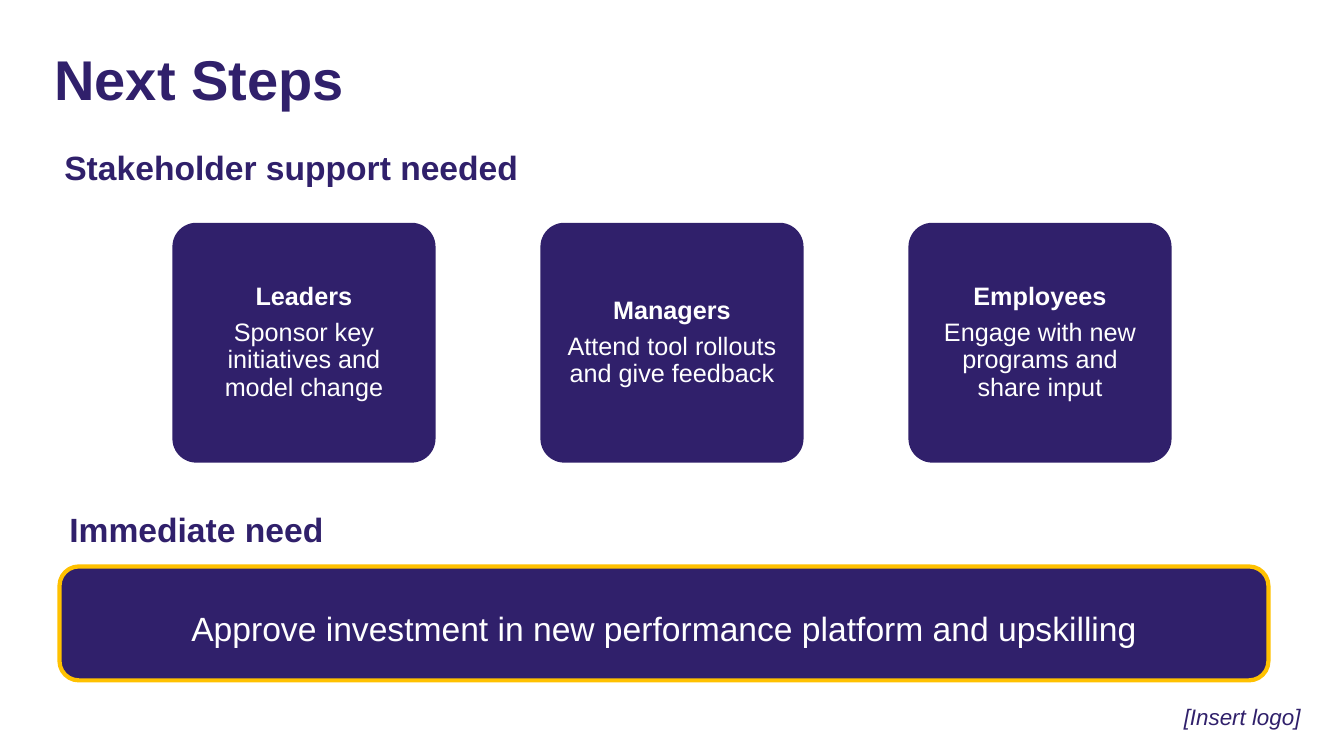
from pptx import Presentation
from pptx.dml.color import RGBColor
from pptx.enum import shapes, text
from pptx.util import Inches, Pt

TITLE = "Next Steps"
HEADS = [("Stakeholder support needed", 0.54, 1.41), ("Immediate need", 0.59, 5)]
CARDS = [
    ("Leaders", "Sponsor key initiatives and model change"),
    ("Managers", "Attend tool rollouts and give feedback"),
    ("Employees", "Engage with new programs and share input"),
]
NEED = "Approve investment in new performance platform and upskilling"
LOGO = "[Insert logo]"


class Theme:
    font = "Arial"
    ink = RGBColor.from_string("30206B")
    gold = RGBColor.from_string("FFC100")
    white = RGBColor.from_string("FFFFFF")
    title, head, card, note = 40, 24, 18, 16


def write(shape, *lines, size, color=Theme.ink, bold=False, italic=False,
          align=text.PP_ALIGN.LEFT, anchor=text.MSO_ANCHOR.TOP,
          pad=(0, 0, 0, 0), space=1.0, after=0):
    """Fill a shape with paragraphs; bold applies to the first one only."""
    frame = shape.text_frame
    frame.word_wrap = True
    frame.vertical_anchor = anchor
    (frame.margin_left, frame.margin_top,
     frame.margin_right, frame.margin_bottom) = map(Inches, pad)
    for i, line in enumerate(lines):
        para = frame.add_paragraph() if i else frame.paragraphs[0]
        para.alignment = align
        para.line_spacing = space
        para.space_after = Pt(after)
        run = para.add_run()
        run.text = line
        font = run.font
        font.name, font.size, font.color.rgb = Theme.font, Pt(size), color
        font.bold, font.italic = bold and i == 0, italic


def box(slide, *place):
    return slide.shapes.add_textbox(*map(Inches, place))


def panel(slide, *place, round=0.1, edge=None):
    shape = slide.shapes.add_shape(
        shapes.MSO_SHAPE.ROUNDED_RECTANGLE, *map(Inches, place))
    shape.adjustments[0] = round
    shape.shadow.inherit = False
    shape.fill.solid()
    shape.fill.fore_color.rgb = Theme.ink
    if edge is None:
        shape.line.fill.background()
    else:
        shape.line.color.rgb = edge
        shape.line.width = Pt(3)
    return shape


def main():
    deck = Presentation()
    deck.slide_width, deck.slide_height = Inches(13.33), Inches(7.5)
    slide = deck.slides.add_slide(deck.slide_layouts[6])
    mid = {"align": text.PP_ALIGN.CENTER, "anchor": text.MSO_ANCHOR.MIDDLE}

    write(box(slide, 0.54, 0.52, 12.27, 0.66), TITLE,
          size=Theme.title, bold=True, space=0.9)
    for head, left, top in HEADS:
        write(box(slide, left, top, 10.34, 0.5), head, size=Theme.head,
              bold=True, pad=(0.1, 0.05, 0.1, 0.05))

    left, step = 1.71, 3.65
    for i, (who, task) in enumerate(CARDS):
        card = panel(slide, left + i * step, 2.21, 2.61, 2.38)
        write(card, who, task, size=Theme.card, color=Theme.white, bold=True,
              pad=(0.14,) * 4, space=0.9, after=6.3, **mid)

    bar = panel(slide, 0.59, 5.62, 11.99, 1.13, round=0.17, edge=Theme.gold)
    write(bar, NEED, size=Theme.head, color=Theme.white,
          pad=(0.19, 0.04, 0.19, 0), space=1.14, **mid)

    write(box(slide, 11.63, 6.72, 1.38, 0.53), LOGO, size=Theme.note,
          italic=True, align=text.PP_ALIGN.CENTER,
          anchor=text.MSO_ANCHOR.BOTTOM, space=0.9)
    deck.save("out.pptx")


if __name__ == "__main__":
    main()
